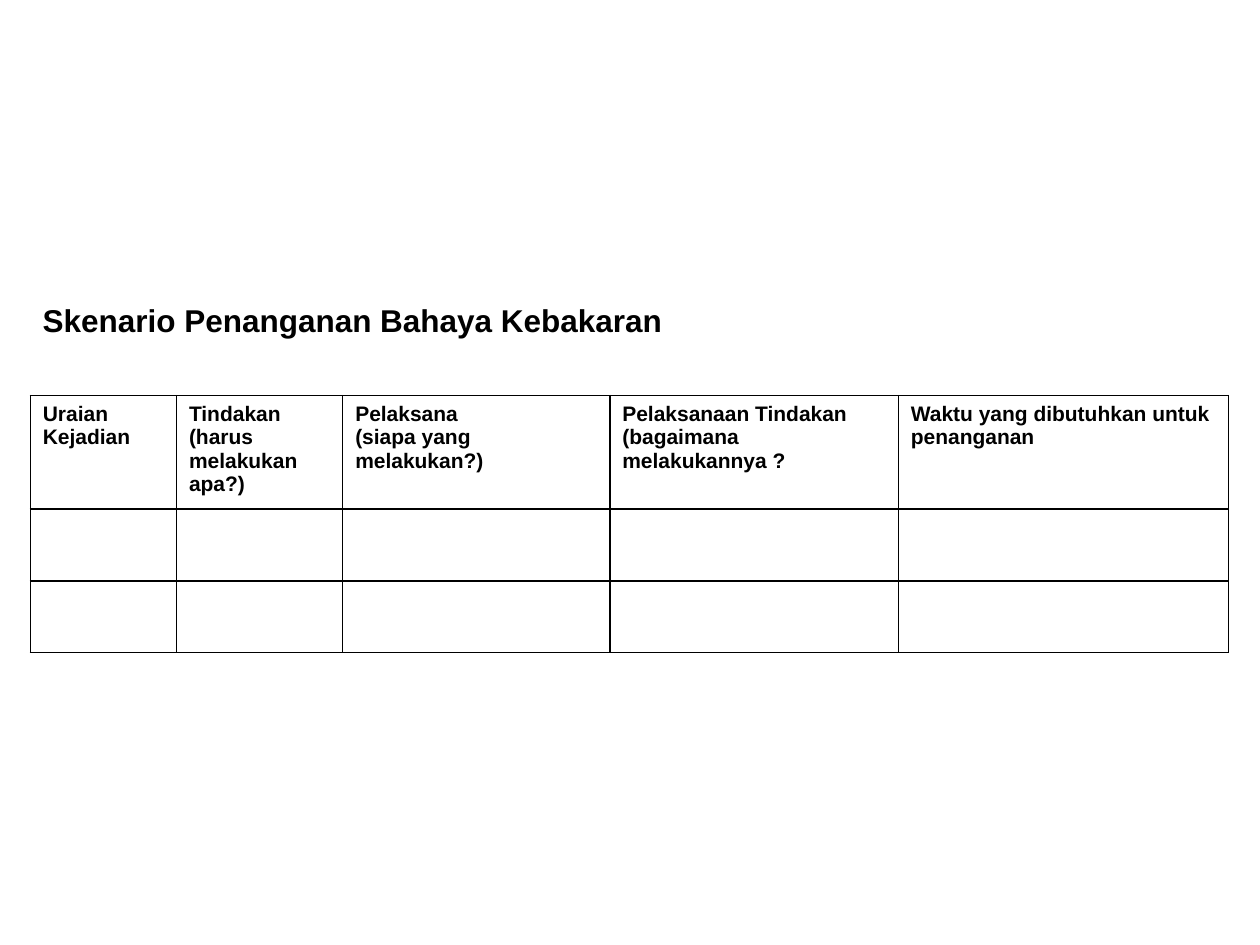
from dataclasses import dataclass

from pptx import Presentation
from pptx.dml.color import RGBColor
from pptx.enum.text import MSO_ANCHOR as Anchor
from pptx.oxml import parse_xml
from pptx.oxml.ns import nsdecls
from pptx.slide import Slide
from pptx.util import Inches, Pt

GRID_COLUMNS, GRID_ROWS = 100, 75
LEFT = 2.4
TITLE_TOP, TABLE_TOP = 23.4, 31.4
COLUMN_WIDTHS = [11.6, 13.2, 21.2, 22.9, 26.2]
ROW_HEIGHTS = [9, 5.7, 5.7]
HEADINGS = [
    ["Uraian Kejadian"],
    ["Tindakan", "(harus melakukan apa?)"],
    ["Pelaksana", "(siapa yang melakukan?)"],
    ["Pelaksanaan Tindakan (bagaimana melakukannya ?"],
    ["Waktu yang dibutuhkan untuk penanganan"],
]


def color(value):
    """Turn a hex string into a colour."""
    return RGBColor.from_string(value)


def write(frame, lines, *, font, size, ink, bold=True):
    """Write one formatted paragraph for each line."""
    for index, line in enumerate(lines):
        paragraph = frame.add_paragraph() if index else frame.paragraphs[0]
        run = paragraph.add_run()
        run.text = line
        run.font.name = font
        run.font.size = Pt(size)
        run.font.bold = bold
        run.font.color.rgb = color(ink)


@dataclass
class Page:
    """Hold the style and the current slide, measured on a grid."""

    presentation: Presentation
    slide: Slide
    font: str = "Arial"
    ink: str = "000000"
    paper: str = "FFFFFF"
    line_width: float = 1

    def x(self, columns):
        """Convert grid columns to a length."""
        return round(self.presentation.slide_width * columns / GRID_COLUMNS)

    def y(self, rows):
        """Convert grid rows to a length."""
        return round(self.presentation.slide_height * rows / GRID_ROWS)

    def background(self):
        """Fill the slide with the paper colour."""
        fill = self.slide.background.fill
        fill.solid()
        fill.fore_color.rgb = color(self.paper)

    def title(self, text, left, top, width, height):
        """Add the title in a box that does not wrap."""
        box = self.slide.shapes.add_textbox(
            self.x(left), self.y(top), self.x(width), self.y(height))
        frame = box.text_frame
        frame.word_wrap = False
        frame.vertical_anchor = Anchor.TOP
        write(frame, [text], font=self.font, size=18, ink=self.ink)

    def border(self, cell):
        """Draw a line on all four sides of a cell."""
        properties = cell._tc.get_or_add_tcPr()
        for position, side in enumerate(("lnL", "lnR", "lnT", "lnB")):
            properties.insert(position, parse_xml(
                f'<a:{side} {nsdecls("a")} w="{Pt(self.line_width)}"><a:solidFill>'
                f'<a:srgbClr val="{self.ink}"/></a:solidFill></a:{side}>'))

    def table(self, headings, left, top, widths, heights):
        """Add a ruled table with a heading row and empty rows."""
        table = self.slide.shapes.add_table(
            len(heights), len(widths), self.x(left), self.y(top),
            self.x(sum(widths)), self.y(sum(heights))).table
        table.first_row = table.horz_banding = False
        for column, width in zip(table.columns, widths):
            column.width = self.x(width)
        for row, height in zip(table.rows, heights):
            row.height = self.y(height)
        for cell in table.iter_cells():
            cell.fill.background()
            self.border(cell)
        for cell, lines in zip(table.rows[0].cells, headings):
            write(cell.text_frame, lines, font=self.font, size=12, ink=self.ink)


def main():
    """Build the fire response scenario slide."""
    presentation = Presentation()
    presentation.slide_width, presentation.slide_height = Inches(10), Inches(7.5)
    slide = presentation.slides.add_slide(presentation.slide_layouts[6])
    page = Page(presentation, slide)
    page.background()
    page.title("Skenario Penanganan Bahaya Kebakaran", LEFT, TITLE_TOP, 51.2, 8)
    page.table(HEADINGS, LEFT, TABLE_TOP, COLUMN_WIDTHS, ROW_HEIGHTS)
    presentation.save("out.pptx")


if __name__ == "__main__":
    main()
